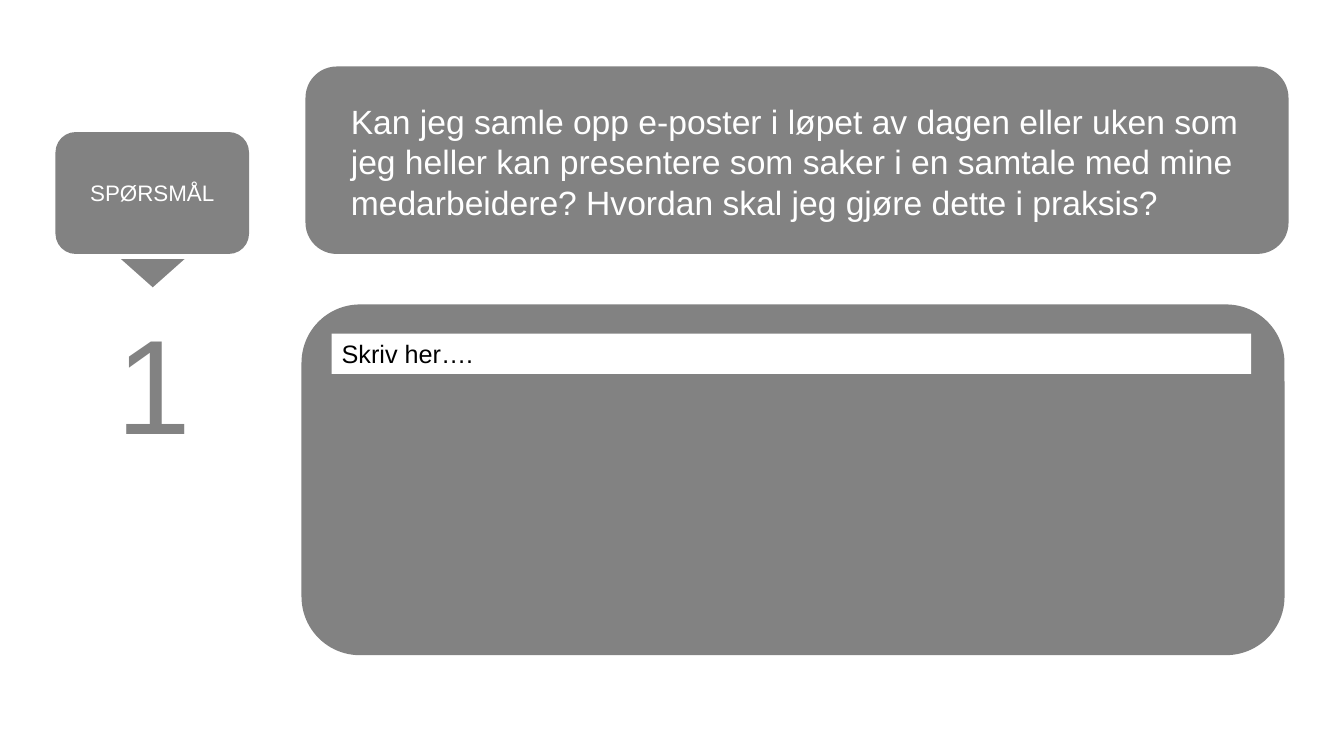
from pptx import Presentation
from pptx.dml.color import RGBColor
from pptx.enum.shapes import MSO_SHAPE
from pptx.enum.text import MSO_ANCHOR, PP_ALIGN
from pptx.util import Inches, Pt

GREY = RGBColor(0x82, 0x82, 0x82)
WHITE = RGBColor(0xFF, 0xFF, 0xFF)
BLACK = RGBColor(0x00, 0x00, 0x00)
FONT = "Arial"

# Content
LABEL = "SPØRSMÅL"
NUMBER = "1"
QUESTION = ("Kan jeg samle opp e-poster i løpet av dagen eller uken som jeg heller "
            "kan presentere som saker i en samtale med mine medarbeidere? "
            "Hvordan skal jeg gjøre dette i praksis?")
ANSWER_PROMPT = "Skriv her…."

# Layout in inches: left, top, width, height
PANEL_WIDTH = 9.75
LABEL_BOX = (0.55, 1.31, 1.92, 1.21)
POINTER_BOX = (1.2, 2.57, 0.63, 0.28)
NUMBER_BOX = (1.06, 2.93, 0.91, 1.72)
QUESTION_PANEL = (3.03, 0.66, PANEL_WIDTH, 1.86)
QUESTION_BOX = (3.48, 1, 9.26, 1.22)
ANSWER_PANEL = (2.99, 3.02, PANEL_WIDTH, 3.48)
ANSWER_FIELD = (3.29, 3.31, 9.12, 0.4)


def add_block(slide, kind, box, color):
    shape = slide.shapes.add_shape(kind, *map(Inches, box))
    shape.shadow.inherit = False
    shape.fill.solid()
    shape.fill.fore_color.rgb = color
    shape.line.fill.background()
    return shape


def write(shape, text, size, color, align=PP_ALIGN.LEFT, anchor=MSO_ANCHOR.TOP):
    frame = shape.text_frame
    frame.word_wrap = True
    frame.vertical_anchor = anchor
    frame.text = text
    paragraph = frame.paragraphs[0]
    paragraph.alignment = align
    font = paragraph.runs[0].font
    font.name, font.size, font.color.rgb = FONT, Pt(size), color


def main():
    presentation = Presentation()
    presentation.slide_width = Inches(13.33)
    presentation.slide_height = Inches(7.5)
    slide = presentation.slides.add_slide(presentation.slide_layouts[6])

    # Question label with its pointer and number
    label = add_block(slide, MSO_SHAPE.ROUNDED_RECTANGLE, LABEL_BOX, GREY)
    write(label, LABEL, 16, WHITE, PP_ALIGN.CENTER, MSO_ANCHOR.MIDDLE)
    pointer = add_block(slide, MSO_SHAPE.ISOSCELES_TRIANGLE, POINTER_BOX, GREY)
    pointer.rotation = 180
    number = slide.shapes.add_textbox(*map(Inches, NUMBER_BOX))
    write(number, NUMBER, 96, GREY)

    # Question panel
    add_block(slide, MSO_SHAPE.ROUNDED_RECTANGLE, QUESTION_PANEL, GREY)
    question = slide.shapes.add_textbox(*map(Inches, QUESTION_BOX))
    frame = question.text_frame
    frame.margin_left = frame.margin_right = frame.margin_top = frame.margin_bottom = 0
    write(question, QUESTION, 24, WHITE)

    # Answer panel with its writing field
    add_block(slide, MSO_SHAPE.ROUNDED_RECTANGLE, ANSWER_PANEL, GREY)
    field = add_block(slide, MSO_SHAPE.RECTANGLE, ANSWER_FIELD, WHITE)
    write(field, ANSWER_PROMPT, 18, BLACK)

    presentation.save("out.pptx")


if __name__ == "__main__":
    main()
